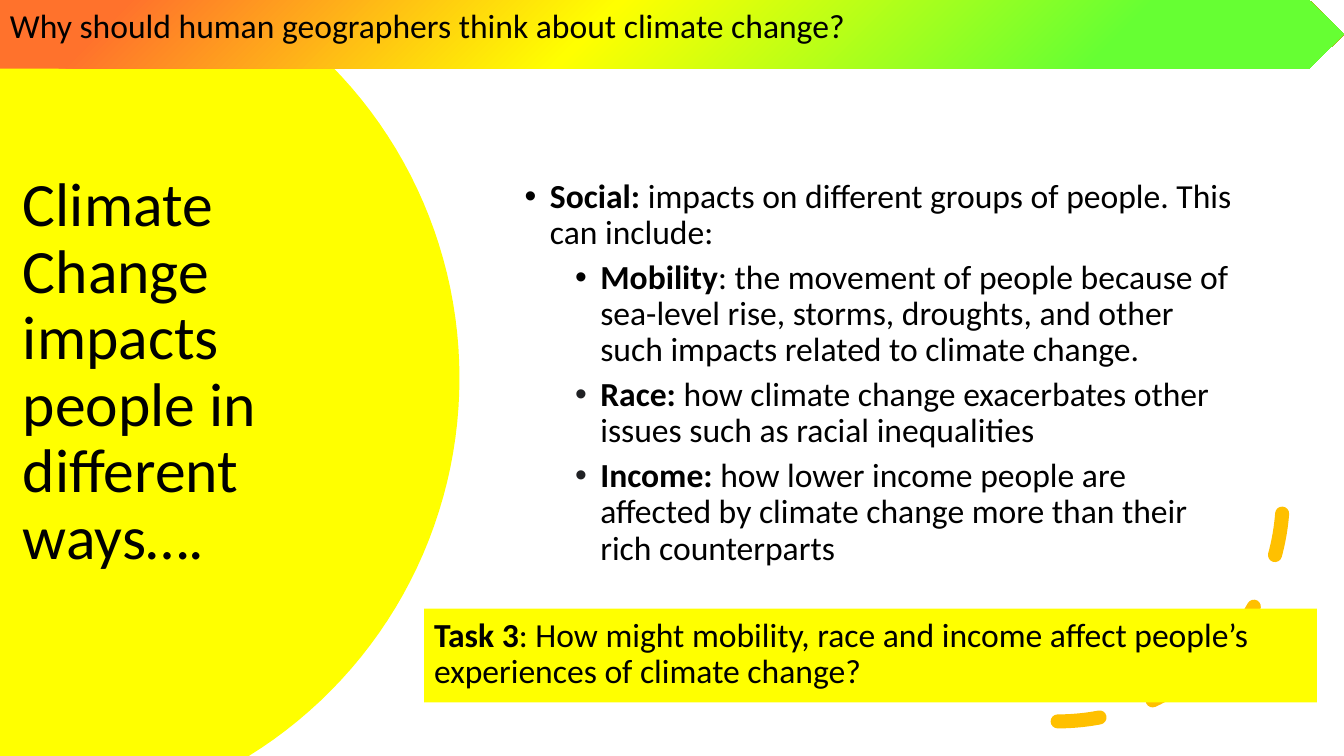
import math

import pptx
import pptx.dml.color
import pptx.enum.dml
import pptx.enum.shapes
import pptx.enum.text
import pptx.oxml
import pptx.oxml.ns
import pptx.util

Cm = pptx.util.Cm
Pt = pptx.util.Pt
SHAPES = pptx.enum.shapes.MSO_SHAPE
ANCHOR = pptx.enum.text.MSO_ANCHOR
NAMESPACE = pptx.oxml.ns.nsdecls("a")

COLORS = {"yellow": "FFFF00", "amber": "FFC000", "green": "66FF33",
          "orange": "FF722C", "black": "000000", "charcoal": "202124"}
WIDTH, HEIGHT = 33.87, 19.05


def rgb(name):
    return pptx.dml.color.RGBColor.from_string(COLORS[name])


def add_span(para, text, size=24, bold=False, color="black", font="Calibri"):
    span = para.add_run()
    span.text = text
    span.font.name, span.font.size, span.font.bold = font, Pt(size), bold
    span.font.color.rgb = rgb(color)
    return span


class Slide:
    """Holds the page and draws each kind of element on it, in centimetres."""

    def __init__(self, page):
        self.page = page

    def paint(self, shape, fill):
        shape.shadow.inherit = False
        shape.line.fill.background()
        if fill:
            shape.fill.solid()
            shape.fill.fore_color.rgb = rgb(fill)

    def shape(self, kind, left, top, width, height, fill=None):
        shape = self.page.shapes.add_shape(
            kind, Cm(left), Cm(top), Cm(width), Cm(height))
        self.paint(shape, fill)
        return shape

    def disc(self, center, radius, fill, steps=60):
        """Disc cut off by the left, top and bottom edges of the page."""
        middle = HEIGHT / 2
        reach = math.asin(middle / radius)
        angles = [reach * (2 * step / steps - 1) for step in range(steps + 1)]
        points = [(Cm(center + radius * math.cos(angle)),
                   Cm(middle + radius * math.sin(angle))) for angle in angles]
        builder = self.page.shapes.build_freeform(0, 0, scale=1.0)
        builder.add_line_segments(points + [(0, Cm(HEIGHT))], close=True)
        self.paint(builder.convert_to_shape(), fill)

    def dashed_arc(self, left, top, size, color, weight):
        """Quarter arc running from the bottom to the right."""
        arc = self.shape(SHAPES.ARC, left, top, size, size)
        arc.adjustments[0], arc.adjustments[1] = 162, 0
        arc._element.spPr.xfrm.set("flipV", "1")
        arc.fill.background()
        arc.line.color.rgb = rgb(color)
        arc.line.width = Pt(weight)
        arc.line.dash_style = pptx.enum.dml.MSO_LINE.DASH
        outline = arc.line._get_or_add_ln()
        outline.set("cap", "rnd")
        outline.append(pptx.oxml.parse_xml(f"<a:round {NAMESPACE}/>"))

    def gradient(self, shape, stops):
        """Circular gradient that starts at the bottom right corner."""
        colors = "".join(
            f'<a:gs pos="{place * 1000}"><a:srgbClr val="{COLORS[name]}"/></a:gs>'
            for place, name in stops)
        shape.fill.background()
        blank = shape._element.spPr.find(pptx.oxml.ns.qn("a:noFill"))
        blank.getparent().replace(blank, pptx.oxml.parse_xml(
            f'<a:gradFill {NAMESPACE} rotWithShape="1"><a:gsLst>{colors}</a:gsLst>'
            '<a:path path="circle"><a:fillToRect l="100000" t="100000"/></a:path>'
            '</a:gradFill>'))

    def textbox(self, left, top, width, height):
        return self.page.shapes.add_textbox(
            Cm(left), Cm(top), Cm(width), Cm(height))

    def frame(self, shape, anchor=ANCHOR.TOP, inset=0.13):
        frame = shape.text_frame
        frame.word_wrap = True
        frame.vertical_anchor = anchor
        frame.margin_left = frame.margin_right = Cm(0.25)
        frame.margin_top = frame.margin_bottom = Cm(inset)
        return frame

    def para(self, frame, spans, spacing=0.9, first=True, **style):
        para = frame.paragraphs[0] if first else frame.add_paragraph()
        para.alignment = pptx.enum.text.PP_ALIGN.LEFT
        para.line_spacing = spacing
        for text, bold in spans:
            add_span(para, text, bold=bold, **style)
        return para

    def bullet(self, para, level, color):
        para.level = level
        properties = para._p.get_or_add_pPr()
        properties.set("marL", str(Cm(1.27 * (level + 1))))
        properties.set("indent", str(Cm(-0.635)))
        for tag in (f'<a:buClr {NAMESPACE}><a:srgbClr val="{COLORS[color]}"/></a:buClr>',
                    f'<a:buFont {NAMESPACE} typeface="Arial"/>',
                    f'<a:buChar {NAMESPACE} char="•"/>'):
            properties.append(pptx.oxml.parse_xml(tag))


IMPACTS = [
    ("Social: ", "impacts on different groups of people. This can include:",
     0, "black"),
    ("Mobility", ": the movement of people because of sea-level rise, storms, "
     "droughts, and other such impacts related to climate change.", 1, "black"),
    ("Race: ", "how climate change exacerbates other issues such as racial "
     "inequalities", 1, "charcoal"),
    ("Income: ", "how lower income people are affected by climate change more "
     "than their rich counterparts", 1, "charcoal"),
]


def main():
    deck = pptx.Presentation()
    deck.slide_width, deck.slide_height = Cm(WIDTH), Cm(HEIGHT)
    slide = Slide(deck.slides.add_slide(deck.slide_layouts[6]))

    # Yellow disc with the title
    slide.disc(0.38, 11.2, "yellow")
    title = slide.shape(SHAPES.RECTANGLE, 0.33, 3.2, 8.89, 12.4, "yellow")
    slide.para(slide.frame(title, ANCHOR.MIDDLE),
               [("Climate Change impacts people in different ways….", False)],
               size=44)

    # Dashed arc
    slide.dashed_arc(20.98, 6.83, 11.35, "amber", 10)

    # Bulleted impacts
    body = slide.frame(slide.textbox(12.34, 1.65, 19.18, 15.52), ANCHOR.MIDDLE)
    for index, (label, text, level, color) in enumerate(IMPACTS):
        para = slide.para(body, [(label, True), (text, False)], first=index == 0)
        para.space_before = Pt(6 * level)
        slide.bullet(para, level, color)
    para.space_after = Pt(6)

    # Question banner
    banner = slide.shape(SHAPES.RIGHT_ARROW, 0, 0, WIDTH, 1.73)
    banner.adjustments[0], banner.adjustments[1] = 1, 0.51
    slide.gradient(banner, [(0, "green"), (18, "green"), (56, "yellow"),
                            (91, "orange"), (100, "orange")])
    slide.para(slide.frame(banner),
               [("Why should human geographers think about climate change?", False)],
               spacing=1.0)

    # Task box
    task = slide.shape(SHAPES.RECTANGLE, 10.69, 15.34, 22.5, 2.36, "yellow")
    frame = slide.frame(task, inset=0.25)
    frame.auto_size = pptx.enum.text.MSO_AUTO_SIZE.SHAPE_TO_FIT_TEXT
    slide.para(frame, [("Task 3", True),
                       (": How might mobility, race and income affect people’s "
                        "experiences of climate change?", False)])

    deck.save("out.pptx")


if __name__ == "__main__":
    main()
